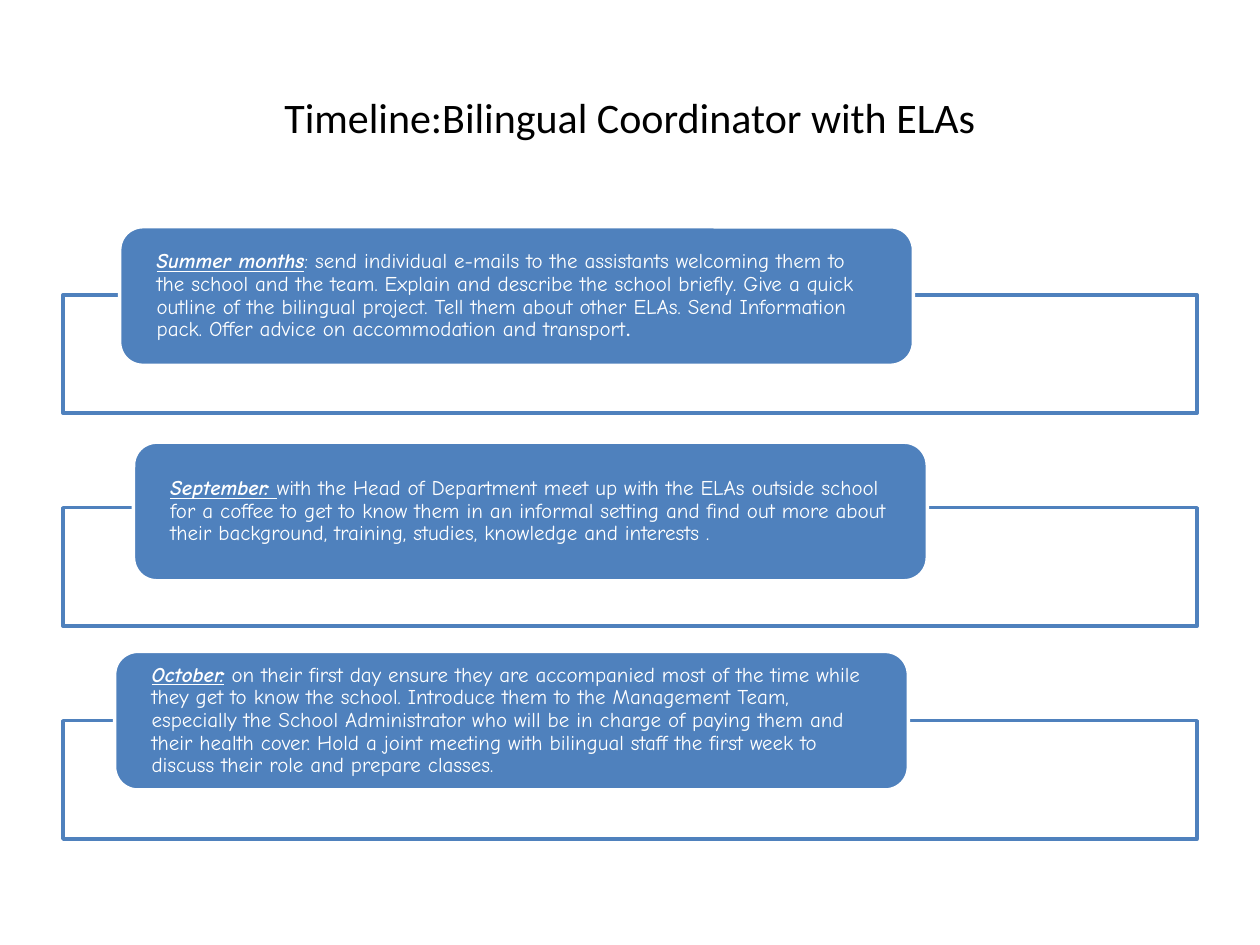
from lxml import etree
from pptx import Presentation
from pptx.dml.color import RGBColor
from pptx.enum.shapes import MSO_SHAPE as Shape
from pptx.enum.text import MSO_ANCHOR as Anchor, PP_ALIGN as Align
from pptx.oxml.ns import qn
from pptx.util import Inches, Pt

BLUE, WHITE, BLACK = "4F81BD", "FFFFFF", "000000"
MARGIN, CONTENT_WIDTH = 0.5, 9
FIRST_BAND_TOP, BAND_PITCH, BAND_HEIGHT = 2.34, 1.69, 0.94
CARD_WIDTH, CARD_HEIGHT = 6.3, 1.1

# Card left, card top, period, tasks, closing mark in the title's font
STAGES = [
    (0.95, 1.8, "Summer months",
     ": send individual e-mails to the assistants welcoming them to the school "
     "and the team. Explain and describe the school briefly. Give a quick outline "
     "of the bilingual project. Tell them about other ELAs. Send Information pack. "
     "Offer advice on accommodation and transport", "."),
    (1.06, 3.51, "September: ",
     "with the Head of Department meet up with the ELAs outside school for a "
     "coffee to get to know them in an informal setting and find out more about "
     "their background, training, studies, knowledge and interests .", ""),
    (0.91, 5.17, "October:",
     " on their first day ensure they are accompanied most of the time while they "
     "get to know the school. Introduce them to the Management Team, especially "
     "the School Administrator who will be in charge of paying them and their "
     "health cover. Hold a joint meeting with bilingual staff the first week to "
     "discuss their role and prepare classes.", ""),
]


def color(hex_code):
    return RGBColor.from_string(hex_code)


def set_font(font, name, size, hex_code):
    font.name, font.size = name, Pt(size)
    font.color.rgb = color(hex_code)


def add_box(slide, kind, left, top, width, height, fill, line):
    box = slide.shapes.add_shape(
        kind, Inches(left), Inches(top), Inches(width), Inches(height))
    box.shadow.inherit = False
    box.fill.solid()
    box.fill.fore_color.rgb = color(fill)
    box.line.color.rgb = color(line)
    box.line.width = Pt(2)
    return box


def add_title(slide, text):
    title = slide.shapes.add_textbox(
        Inches(MARGIN), Inches(0.3), Inches(CONTENT_WIDTH), Inches(1.25))
    frame = title.text_frame
    frame.word_wrap = True
    frame.vertical_anchor = Anchor.MIDDLE
    heading = frame.paragraphs[0]
    heading.text = text
    heading.alignment = Align.CENTER
    set_font(heading.font, "Calibri", 24, BLACK)


def add_band(slide, row):
    band = add_box(slide, Shape.RECTANGLE, MARGIN, FIRST_BAND_TOP + row * BAND_PITCH,
                   CONTENT_WIDTH, BAND_HEIGHT, WHITE, BLUE)
    fill_color = band.fill._xPr.find(qn("a:solidFill"))[0]
    etree.SubElement(fill_color, qn("a:alpha"), val="90000")


def add_card(slide, left, top, period, tasks, closing):
    card = add_box(slide, Shape.ROUNDED_RECTANGLE, left, top,
                   CARD_WIDTH, CARD_HEIGHT, BLUE, WHITE)
    frame = card.text_frame
    frame.word_wrap = True
    frame.vertical_anchor = Anchor.MIDDLE
    frame.margin_left = frame.margin_right = Inches(0.24)
    frame.margin_top = frame.margin_bottom = 0

    entry = frame.paragraphs[0]
    entry.alignment = Align.LEFT
    entry.line_spacing = 0.9
    set_font(entry.font, "Comic Neue", 12, WHITE)
    lead = entry.add_run()
    lead.text = period
    lead.font.bold = lead.font.italic = lead.font.underline = True
    entry.add_run().text = tasks
    if closing:
        mark = entry.add_run()
        mark.text = closing
        mark.font.name = "Calibri"


def main():
    deck = Presentation()
    deck.slide_width, deck.slide_height = Inches(10), Inches(7.5)
    slide = deck.slides.add_slide(deck.slide_layouts[6])
    add_title(slide, "Timeline:Bilingual Coordinator with ELAs")
    for row, stage in enumerate(STAGES):
        add_band(slide, row)
        add_card(slide, *stage)
    deck.save("out.pptx")


if __name__ == "__main__":
    main()
